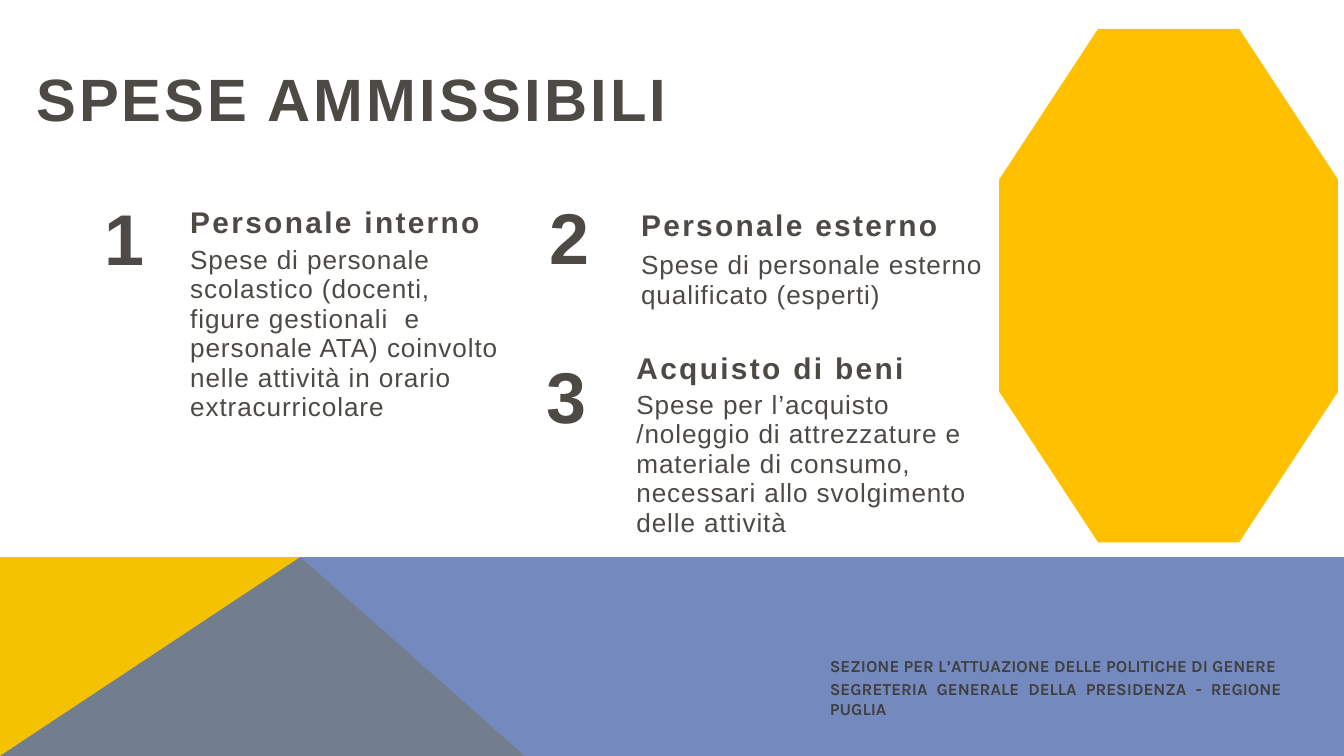
from dataclasses import dataclass

from lxml.etree import SubElement
from pptx import Presentation
from pptx.dml.color import RGBColor
from pptx.enum.shapes import MSO_SHAPE
from pptx.enum.text import MSO_AUTO_SIZE, PP_ALIGN
from pptx.oxml.ns import qn
from pptx.util import Inches, Pt

COLUMNS, ROWS = 20, 11.25
COL = Inches(20) / COLUMNS
ROW = Inches(11.25) / ROWS

INK = "4D4A46"
FOOTER_INK = "404040"
GOLD = "F5C201"
AMBER = "FFC000"
BLUE = "526DB0"
RULE_WHITE = "FFFDFD"


@dataclass
class Style:
    size: float
    leading: float
    tracking: float
    bold: bool = True


TITLE = Style(64, 67.6, 3.3)
NUMBER = Style(77, 93.6, 4.5)
HEADING = Style(32, 45.4, 2.5)
BODY = Style(28, 31.5, 1, False)


@dataclass
class Expense:
    number: str
    heading: str
    body: list
    box: tuple
    text_left: float
    tops: tuple
    rule_center: tuple
    heights: tuple


def color(value):
    return RGBColor.from_string(value)


def cells(left, top, width, height):
    return round(left * COL), round(top * ROW), round(width * COL), round(height * ROW)


def paint(shape, fill, opacity=None):
    shape.shadow.inherit = False
    shape.fill.solid()
    shape.fill.fore_color.rgb = color(fill)
    shape.line.fill.background()
    if opacity is not None:
        tint = shape.fill._xPr.find(qn("a:solidFill"))[0]
        SubElement(tint, qn("a:alpha"), val=str(opacity * 1000))


def add_polygon(shapes, box, points, fill, opacity=None):
    left, top = box[:2]
    corners = [(round((left + x) * COL), round((top + y) * ROW)) for x, y in points]
    outline = shapes.build_freeform(*corners[0], scale=1.0)
    outline.add_line_segments(corners[1:], close=True)
    paint(outline.convert_to_shape(), fill, opacity)


def add_run(paragraph, words, font, size, ink, bold):
    run = paragraph.add_run()
    run.text = words
    run.font.name = font
    run.font.size = Pt(size)
    run.font.bold = bold
    run.font.color.rgb = color(ink)
    return run


def add_frame(shapes, box):
    frame = shapes.add_textbox(*cells(*box)).text_frame
    frame.word_wrap = True
    frame.auto_size = MSO_AUTO_SIZE.SHAPE_TO_FIT_TEXT
    return frame


def paragraphs(frame, lines):
    for index, words in enumerate(lines):
        yield (frame.add_paragraph() if index else frame.paragraphs[0]), words


def add_text(shapes, box, lines, style):
    frame = add_frame(shapes, box)
    frame.margin_left = frame.margin_right = frame.margin_top = frame.margin_bottom = 0
    for paragraph, words in paragraphs(frame, lines):
        paragraph.line_spacing = Pt(style.leading)
        run = add_run(paragraph, words, "Arial", style.size, INK, style.bold)
        run.font._element.set("spc", str(round(style.tracking * 100)))


def add_band(slide, box):
    width, height = box[2:]
    peak = 4.47
    add_polygon(slide.shapes, box,
                [(0, height), (0, 0), (peak, 0), (7.81, height)], GOLD)
    add_polygon(slide.shapes, box,
                [(0, height), (peak, 0), (width, 0), (width, height)], BLUE, 80)


def add_expense(slide, expense):
    shapes = slide.shapes.add_group_shape().shapes
    left, top, width, number_width = expense.box
    number_top, heading_top, body_top = (top + offset for offset in expense.tops)
    heading_height, body_height = expense.heights
    text_left = left + expense.text_left
    add_text(shapes, (left, number_top, number_width, 1.32), [expense.number], NUMBER)
    add_text(shapes, (text_left, heading_top, width, heading_height),
             [expense.heading], HEADING)
    add_text(shapes, (text_left, body_top, width, body_height), expense.body, BODY)
    length, thickness = 1.75, 0.1
    center_x, center_y = expense.rule_center
    rule_box = (left + center_x - length / 2, top + center_y - thickness / 2,
                length, thickness)
    rule = shapes.add_shape(MSO_SHAPE.RECTANGLE, *cells(*rule_box))
    rule.rotation = 270
    paint(rule, RULE_WHITE)


def add_octagon(slide, box):
    width, height = box[2:]
    cut_x, cut_y = 1.47, 2.24
    add_polygon(slide.shapes, box, [
        (width - cut_x, 0), (cut_x, 0), (0, cut_y), (0, height - cut_y),
        (cut_x, height), (width - cut_x, height),
        (width, height - cut_y), (width, cut_y),
    ], AMBER)


def add_footer(slide, box, lines):
    frame = add_frame(slide.shapes, box)
    for paragraph, words in paragraphs(frame, lines):
        paragraph.alignment = PP_ALIGN.JUSTIFY
        paragraph.space_after = Pt(3)
        add_run(paragraph, words, "Karla", 18, FOOTER_INK, True)


EXPENSES = [
    Expense("3", "Acquisto di beni",
            ["Spese per l’acquisto /noleggio di attrezzature e materiale di consumo, "
             "necessari allo svolgimento delle attività"],
            (8.13, 5.11, 5.38, 1.07), 1.34, (0.1, 0, 0.7), (0.77, 1.26), (1.2, 2.24)),
    Expense("1", "Personale interno",
            ["Spese di personale scolastico (docenti,",
             "figure gestionali  e personale ATA) coinvolto nelle attività "
             "in orario extracurricolare"],
            (1.56, 2.86, 4.91, 0.97), 1.27, (0, 0.08, 0.79), (0.75, 1.04), (0.58, 2.69)),
    Expense("2", "Personale esterno",
            ["Spese di personale esterno qualificato (esperti)"],
            (8.17, 2.85, 5.38, 1.07), 1.37, (0, 0.13, 0.88), (1.21, 1.21), (0.58, 1.35)),
]


def main():
    deck = Presentation()
    deck.slide_width, deck.slide_height = cells(0, 0, COLUMNS, ROWS)[2:]
    slide = deck.slides.add_slide(deck.slide_layouts[6])
    add_band(slide, (0, 8.29, COLUMNS, 2.96))
    add_text(slide.shapes, (0.54, 1.04, 10.08, 0.95), ["SPESE AMMISSIBILI"], TITLE)
    for expense in EXPENSES:
        add_expense(slide, expense)
    add_octagon(slide, (14.87, 0.43, 5.04, 7.64))
    add_footer(slide, (12.25, 9.71, 6.92, 0.75), [
        "SEZIONE PER L’ATTUAZIONE DELLE POLITICHE DI GENERE",
        "SEGRETERIA GENERALE DELLA PRESIDENZA - REGIONE PUGLIA",
    ])
    deck.save("out.pptx")


if __name__ == "__main__":
    main()
